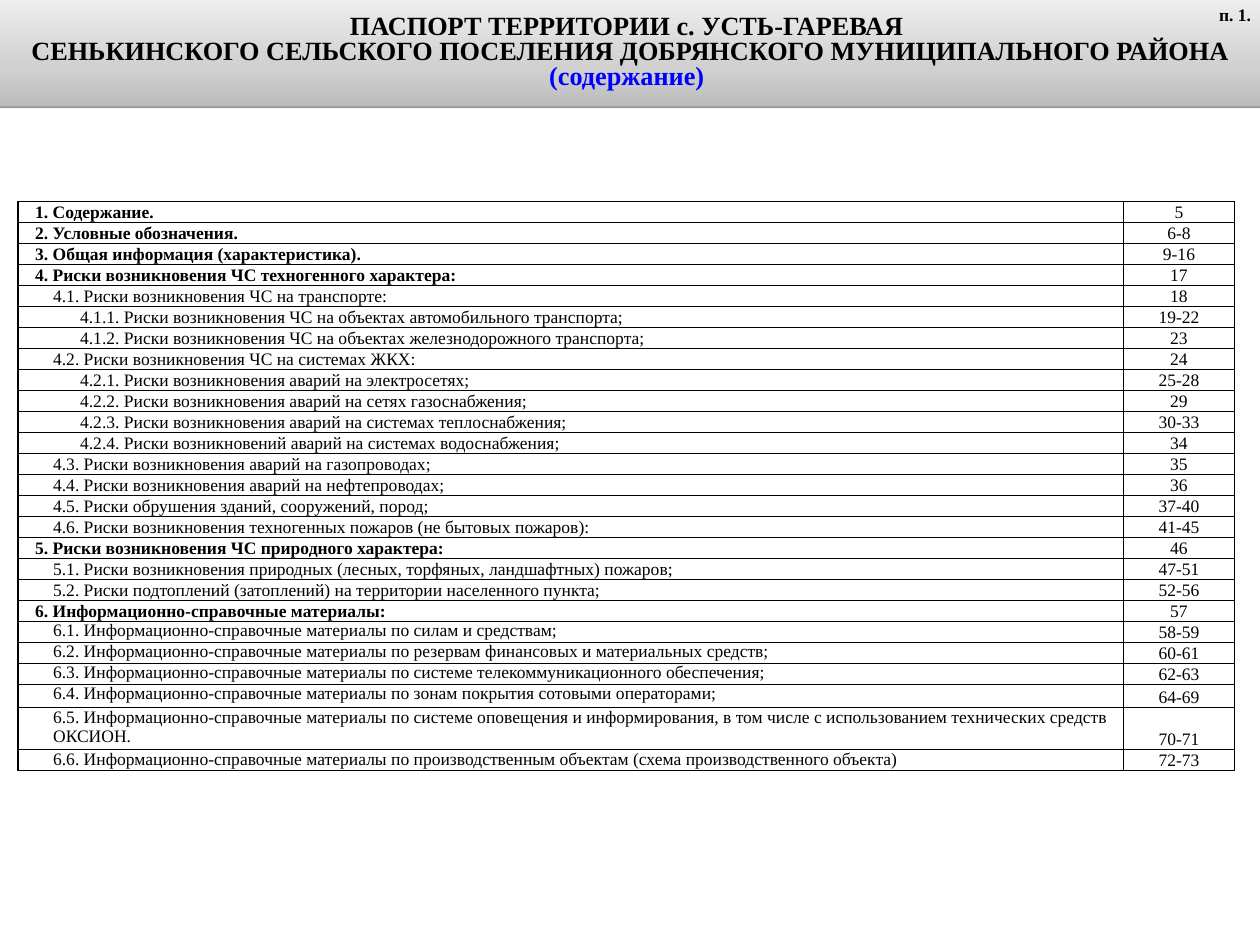
from copy import deepcopy
from dataclasses import dataclass

from lxml import etree
from pptx import Presentation
from pptx import util as u
from pptx.dml.color import RGBColor
from pptx.enum import text
from pptx.oxml import ns


@dataclass(frozen=True)
class Theme:
    font: str = "Times New Roman"
    ink: str = "000000"
    accent: str = "0000FF"
    paper: str = "FFFFFF"
    band: tuple = ((0, "BCBCBC"), (0.35, "D0D0D0"), (1, "EDEDED"))
    title_size: int = 21
    body_size: int = 14
    border: float = 1


THEME = Theme()
COLUMNS, ROWS = 140, 105
CELL = u.Inches(0.1)
INDENTS = {1: 1.9, 2: 3.9, 3: 6.9}
TALL_ROWS = {23: 2.6, 24: 4.7}
TABLE_HEIGHT = 63.3

TITLE = [
    ("ПАСПОРТ ТЕРРИТОРИИ с. УСТЬ-ГАРЕВАЯ ", THEME.ink),
    ("СЕНЬКИНСКОГО СЕЛЬСКОГО ПОСЕЛЕНИЯ ДОБРЯНСКОГО МУНИЦИПАЛЬНОГО РАЙОНА", THEME.ink),
    ("(содержание) ", THEME.accent),
]

CONTENTS = [
    ("1. Содержание.", "5"),
    ("2. Условные обозначения.", "6-8"),
    ("3. Общая информация (характеристика).", "9-16"),
    ("4. Риски возникновения ЧС техногенного характера:", "17"),
    ("4.1. Риски возникновения ЧС на транспорте:", "18"),
    ("4.1.1. Риски возникновения ЧС на объектах автомобильного транспорта;", "19-22"),
    ("4.1.2. Риски возникновения ЧС на объектах железнодорожного транспорта;", "23"),
    ("4.2. Риски возникновения ЧС на системах ЖКХ:", "24"),
    ("4.2.1. Риски возникновения аварий на электросетях;", "25-28"),
    ("4.2.2. Риски возникновения аварий на сетях газоснабжения;", "29"),
    ("4.2.3. Риски возникновения аварий на системах теплоснабжения;", "30-33"),
    ("4.2.4. Риски возникновений аварий на системах водоснабжения;", "34"),
    ("4.3. Риски возникновения аварий на газопроводах;", "35"),
    ("4.4. Риски возникновения аварий на нефтепроводах;", "36"),
    ("4.5. Риски обрушения зданий, сооружений, пород;", "37-40"),
    ("4.6. Риски возникновения техногенных пожаров (не бытовых пожаров):", "41-45"),
    ("5. Риски возникновения ЧС природного характера:", "46"),
    ("5.1. Риски возникновения природных (лесных, торфяных, ландшафтных) пожаров;", "47-51"),
    ("5.2. Риски подтоплений (затоплений) на территории населенного пункта;", "52-56"),
    ("6. Информационно-справочные материалы:", "57"),
    ("6.1. Информационно-справочные материалы по силам и средствам;", "58-59"),
    ("6.2. Информационно-справочные материалы по резервам финансовых и материальных средств;", "60-61"),
    ("6.3. Информационно-справочные материалы по системе телекоммуникационного обеспечения;", "62-63"),
    ("6.4. Информационно-справочные материалы по зонам покрытия сотовыми операторами;", "64-69"),
    ("6.5. Информационно-справочные материалы по системе оповещения и информирования, "
     "в том числе с использованием технических средств ОКСИОН.", "70-71"),
    ("6.6. Информационно-справочные материалы по производственным объектам "
     "(схема производственного объекта)", "72-73"),
]


def grid(*cells):
    return [u.Emu(round(n * CELL)) for n in cells]


def write(p, content, size=THEME.body_size, color=THEME.ink, bold=False,
          align=text.PP_ALIGN.LEFT, indent=0, spacing=1.0):
    p.alignment = align
    p.line_spacing = spacing
    p.space_before = u.Pt(0)
    if indent:
        p._p.get_or_add_pPr().set("marL", str(grid(indent)[0]))
    r = p.add_run()
    r.text = content
    r.font.name = THEME.font
    r.font.size = u.Pt(size)
    r.font.bold = bold
    r.font.color.rgb = RGBColor.from_string(color)


def child(parent, tag, **attributes):
    return etree.SubElement(parent, ns.qn(tag), attributes)


def fill_band(sp):
    sp.fill.gradient()
    sp.fill.gradient_angle = 90
    stops = sp._element.spPr.find(".//" + ns.qn("a:gsLst"))
    stops.insert(1, deepcopy(stops[0]))
    for stop, (position, color) in zip(sp.fill.gradient_stops, THEME.band):
        stop.position = position
        stop.color.rgb = RGBColor.from_string(color)
    sp.line.fill.background()


def cast_shadow(sp):
    effects = child(sp._element.spPr, "a:effectLst")
    shadow = child(effects, "a:outerShdw", blurRad="0", dist=str(u.Pt(1.6)),
                   dir="5400000", rotWithShape="0")
    color = child(shadow, "a:srgbClr", val=THEME.ink)
    child(color, "a:alpha", val="38000")


def add_title(slide):
    sp = slide.shapes.title
    sp.left, sp.top, sp.width, sp.height = grid(0, 0, COLUMNS, 11.8)
    fill_band(sp)
    cast_shadow(sp)
    tf = sp.text_frame
    tf.word_wrap = True
    tf.auto_size = text.MSO_AUTO_SIZE.NONE
    tf.vertical_anchor = text.MSO_ANCHOR.MIDDLE
    for i, (line, color) in enumerate(TITLE):
        p = tf.add_paragraph() if i else tf.paragraphs[0]
        write(p, line, size=THEME.title_size, color=color, bold=True,
              align=text.PP_ALIGN.CENTER, spacing=0.8)


def add_page_mark(slide):
    tf = slide.shapes.add_textbox(*grid(132.1, 0, 7.9, 3.3)).text_frame
    tf.word_wrap = True
    write(tf.paragraphs[0], "п. 1.", bold=True, align=text.PP_ALIGN.RIGHT)


def fill_cell(cell, content, anchor=text.MSO_ANCHOR.BOTTOM, **style):
    cell.margin_left = cell.margin_right = cell.margin_top = cell.margin_bottom = 0
    cell.vertical_anchor = anchor
    tcPr = cell._tc.get_or_add_tcPr()
    for side in "LRTB":
        ln = child(tcPr, f"a:ln{side}", w=str(u.Pt(THEME.border)))
        child(child(ln, "a:solidFill"), "a:srgbClr", val=THEME.ink)
    cell.fill.solid()
    cell.fill.fore_color.rgb = RGBColor.from_string(THEME.paper)
    write(cell.text_frame.paragraphs[0], content, **style)


def add_contents(slide):
    frame = slide.shapes.add_table(len(CONTENTS), 2, *grid(2, 22.4, 135.2, TABLE_HEIGHT))
    table = frame.table
    table.first_row = table.horz_banding = False
    table.columns[0].width, table.columns[1].width = grid(122.8, 12.4)
    plain = (TABLE_HEIGHT - sum(TALL_ROWS.values())) / (len(CONTENTS) - len(TALL_ROWS))
    for i, (entry, pages) in enumerate(CONTENTS):
        table.rows[i].height = grid(TALL_ROWS.get(i, plain))[0]
        number = entry.split()[0]
        level = number.count(".")
        at_top = level == 2 and number.startswith("6.")
        fill_cell(table.cell(i, 0), entry, bold=level == 1, indent=INDENTS[level],
                  anchor=text.MSO_ANCHOR.TOP if at_top else text.MSO_ANCHOR.BOTTOM)
        fill_cell(table.cell(i, 1), pages, align=text.PP_ALIGN.CENTER)


def main():
    prs = Presentation()
    prs.slide_width, prs.slide_height = grid(COLUMNS, ROWS)
    slide = prs.slides.add_slide(prs.slide_layouts[5])
    add_contents(slide)
    add_title(slide)
    add_page_mark(slide)
    prs.save("out.pptx")


if __name__ == "__main__":
    main()
